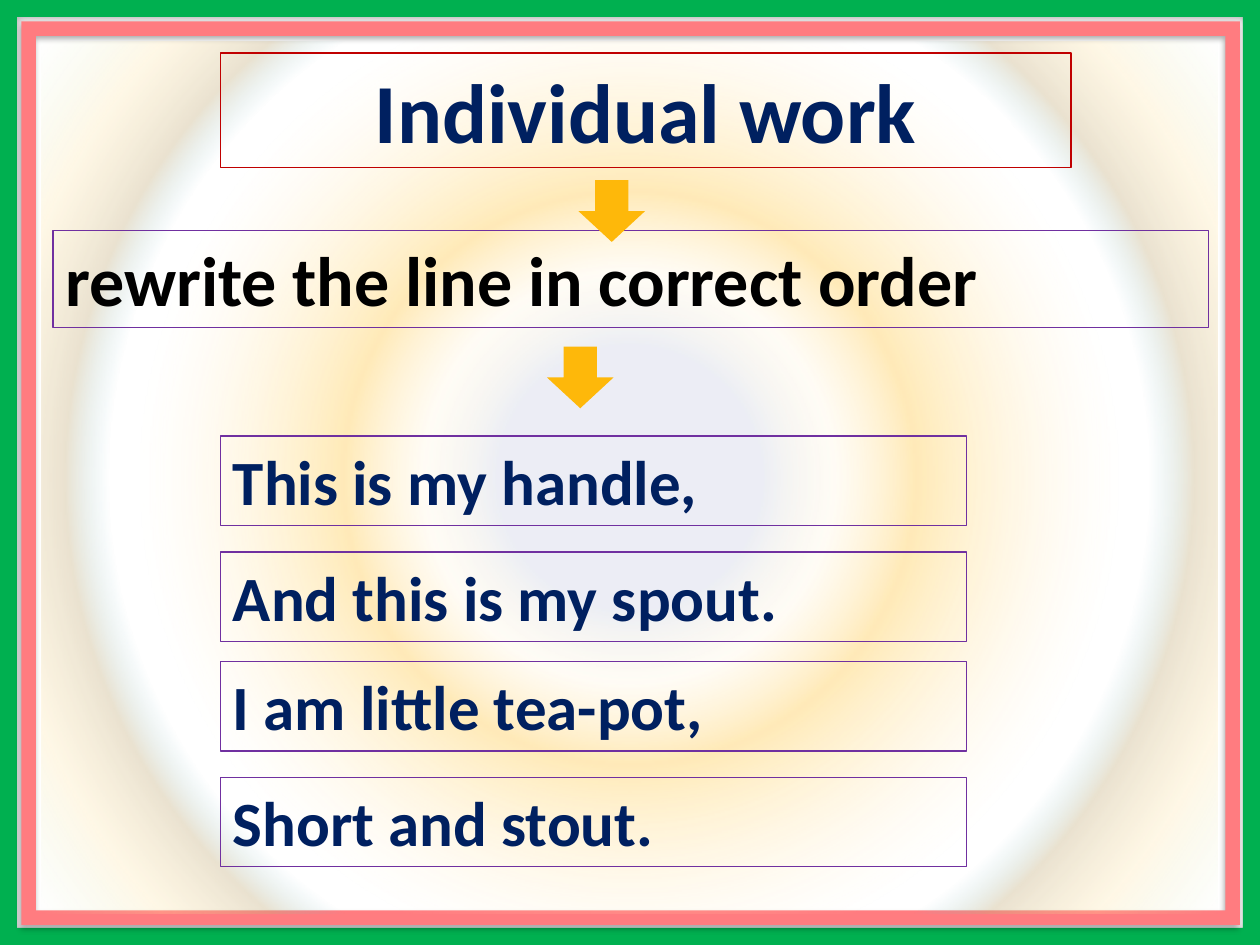
from lxml import etree
from pptx import Presentation
from pptx.dml.color import RGBColor
from pptx.enum.shapes import MSO_SHAPE
from pptx.enum.text import MSO_AUTO_SIZE, PP_ALIGN
from pptx.oxml.ns import qn
from pptx.util import Inches, Pt

FRAME, RECT, ARROW = MSO_SHAPE.FRAME, MSO_SHAPE.RECTANGLE, MSO_SHAPE.RIGHT_ARROW
LEFT, CENTER = PP_ALIGN.LEFT, PP_ALIGN.CENTER
GROW = MSO_AUTO_SIZE.SHAPE_TO_FIT_TEXT

NAVY, BLACK, RED, PURPLE = "002060", "000000", "C00000", "7030A0"
GREEN, PINK, AMBER = "00B050", "FF7C80", "FEB80A"

# Position %, colour, opacity %
GLOW = [
    (18, "B0BAD7", 24), (28, "FFE39D", 9), (39, "FED46C", 48),
    (67, "FFF1CE", 0), (71, "7EC3D4", 0), (77, "C6B07E", 36),
    (87, "FFE39D", 25), (100, "D0E4A6", 0),
]


def rgb(value):
    return RGBColor.from_string(value)


def add_color(parent, value, opacity):
    color = etree.SubElement(parent, qn("a:srgbClr"), val=value)
    etree.SubElement(color, qn("a:alpha"), val=str(opacity * 1000))


class SlideBuilder:
    font = "Calibri"
    line_width = Pt(0.75)

    def __init__(self, prs):
        self.slide = prs.slides.add_slide(prs.slide_layouts[6])
        self.slide.background.fill.solid()
        self.slide.background.fill.fore_color.rgb = rgb("FFFFFF")

    def shape(self, kind, box, fill=None):
        sp = self.slide.shapes.add_shape(kind, *map(Inches, box))
        sp.shadow.inherit = False
        sp.line.fill.background()
        if fill:
            sp.fill.solid()
            sp.fill.fore_color.rgb = rgb(fill)
        return sp

    def frame(self, box, fill, thickness, opacity, blur, dist, angle):
        sp = self.shape(FRAME, box, fill)
        sp.adjustments[0] = thickness
        effects = sp._element.spPr.find(qn("a:effectLst"))
        shadow = etree.SubElement(
            effects, qn("a:outerShdw"), blurRad=str(Pt(blur)),
            dist=str(Pt(dist)), dir=str(angle * 60000), rotWithShape="0")
        add_color(shadow, BLACK, opacity)

    def glow(self, box, stops):
        sp = self.shape(RECT, box)
        grad = etree.Element(qn("a:gradFill"), rotWithShape="1")
        stop_list = etree.SubElement(grad, qn("a:gsLst"))
        for pos, color, opacity in stops:
            stop = etree.SubElement(stop_list, qn("a:gs"), pos=str(pos * 1000))
            add_color(stop, color, opacity)
        path = etree.SubElement(grad, qn("a:path"), path="circle")
        etree.SubElement(path, qn("a:fillToRect"),
                         l="50000", t="50000", r="50000", b="50000")
        sp._element.spPr.find(qn("a:prstGeom")).addnext(grad)

    def text(self, text, box, size, color=NAVY, line=PURPLE, align=LEFT):
        sp = self.slide.shapes.add_textbox(*map(Inches, box))
        sp.line.color.rgb = rgb(line)
        sp.line.width = self.line_width
        tf = sp.text_frame
        tf.word_wrap = True
        tf.auto_size = GROW
        p = tf.paragraphs[0]
        p.text = text
        p.alignment = align
        p.font.name = self.font
        p.font.size = Pt(size)
        p.font.bold = True
        p.font.color.rgb = rgb(color)

    def down_arrow(self, left, top):
        sp = self.shape(ARROW, (left, top, 0.49, 0.53), AMBER)
        sp.rotation = 90


def main():
    prs = Presentation()
    prs.slide_width, prs.slide_height = Inches(10), Inches(7.5)
    s = SlideBuilder(prs)

    # Border and background glow
    s.frame((0, 0, 10, 7.5), GREEN, 0.018, 30, 4.5, 2.6, 53)
    s.frame((0.17, 0.17, 9.67, 7.17), PINK, 0.016, 32, 3.5, 2.2, 90)
    s.glow((0.33, 0.33, 9.33, 6.92), GLOW)

    # Title and task
    s.text("Individual work", (1.75, 0.42, 6.75, 0.91), 48,
           line=RED, align=CENTER)
    s.text("rewrite the line in correct order", (0.42, 1.83, 9.17, 0.77), 40,
           color=BLACK)
    s.down_arrow(4.36, 2.73)
    s.down_arrow(4.61, 1.41)

    # Rhyme lines to reorder
    rhyme = [
        (3.46, "This is my handle,"),
        (4.38, "And this is my spout."),
        (5.25, "I am little tea-pot,"),
        (6.17, "Short and stout."),
    ]
    for top, line in rhyme:
        s.text(line, (1.75, top, 5.92, 0.71), 36)

    prs.save("out.pptx")


if __name__ == "__main__":
    main()
